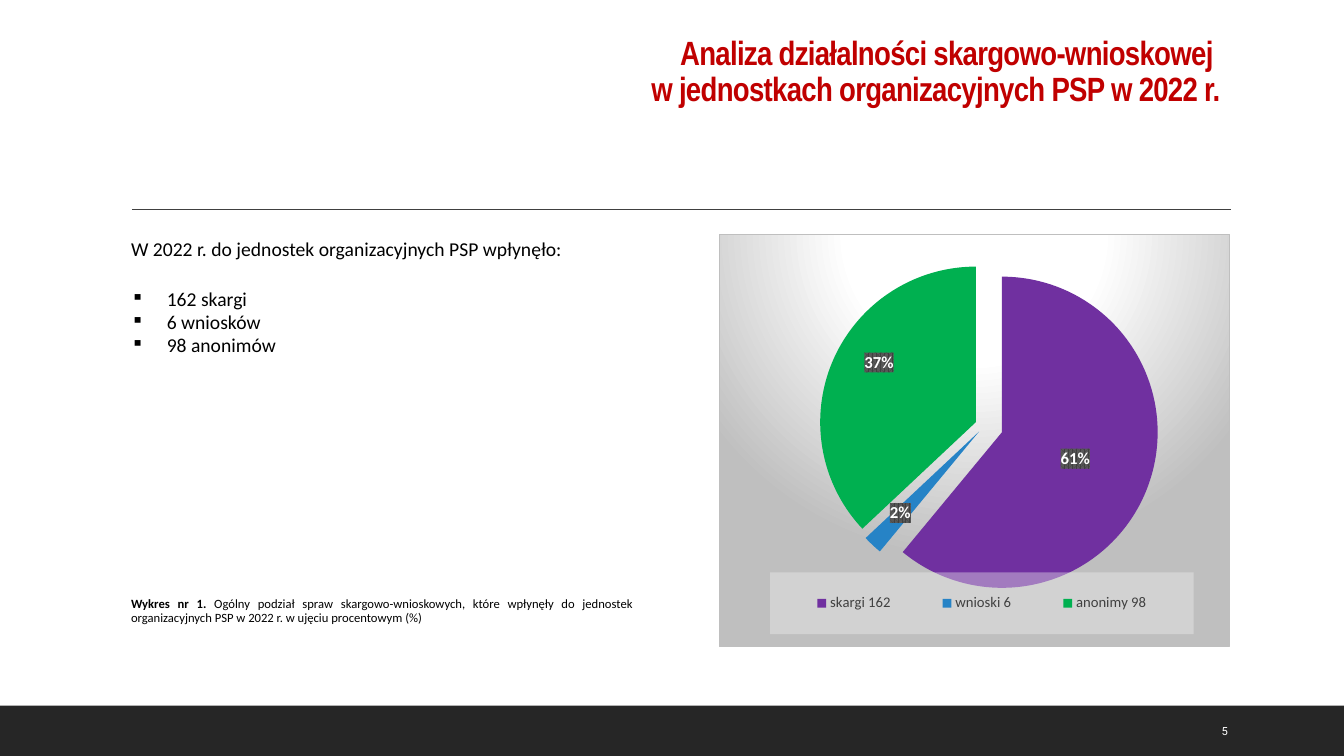
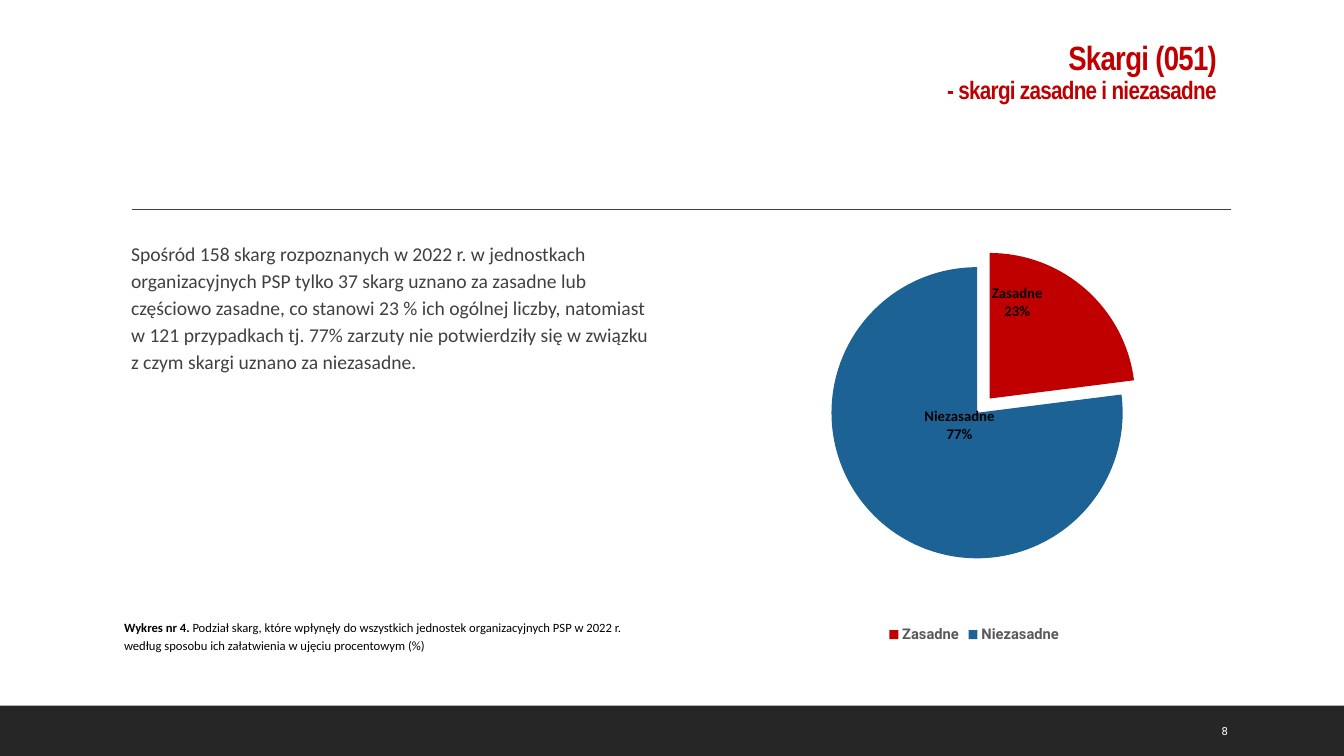
import copy

import lxml.etree
import pptx
import pptx.chart.data
import pptx.dml.color
import pptx.enum.chart
import pptx.enum.shapes
import pptx.enum.text
import pptx.oxml
import pptx.oxml.ns
import pptx.util

Pt = pptx.util.Pt
ALIGN = pptx.enum.text.PP_ALIGN
LEGEND = pptx.enum.chart.XL_LEGEND_POSITION

COLORS = {
    "title": "C00000", "band": "262626", "rule": "404040", "white": "FFFFFF",
    "black": "000000", "body": "404040", "legend": "595959", "silver": "BFBFBF",
    "legend_box": "F2F2F2", "label_box": "404040", "label_dots": "595959",
    "purple": "7030A0", "sky": "2683C6", "green": "00B050",
    "red": "C00000", "navy": "1D6294",
}

TITLE = {"name": "Arial Narrow", "size": Pt(24), "bold": True, "color": "title"}
SUBTITLE = {**TITLE, "size": Pt(18)}
BODY = {"name": "Calibri", "size": Pt(14), "color": "black"}
GRAY_BODY = {**BODY, "color": "body"}
CAPTION = {"name": "Calibri", "size": Pt(9), "color": "black"}
CAPTION_BOLD = {**CAPTION, "bold": True}
PAGE_NUMBER = {"name": "Roboto", "size": Pt(8), "color": "white"}
CHART_TEXT = {"name": "Roboto", "size": Pt(10), "color": "black"}

SLIDE_SIZE = (960, 540)
BAND_HEIGHT = 36
RULE = (94.3, 149.8, 879.1)
CHART_FRAME = (513.4, 167, 365, 295.2)
TEXT_LEFT = 93.6

NAMESPACES = " ".join(pptx.oxml.ns.nsdecls(prefix) for prefix in ("a", "c"))


def rgb(name):
    return pptx.dml.color.RGBColor.from_string(COLORS[name])


def set_attributes(target, formats):
    for name, value in formats.items():
        if name == "color":
            target.color.rgb = rgb(value)
        else:
            setattr(target, name, value)


def xml(tag, content="", attributes=""):
    """Builds one element, with the drawing and chart namespaces declared."""
    return pptx.oxml.parse_xml(f"<{tag} {NAMESPACES} {attributes}>{content}</{tag}>")


def solid(name, alpha=100):
    return (f'<a:solidFill><a:srgbClr val="{COLORS[name]}">'
            f'<a:alpha val="{alpha * 1000}"/></a:srgbClr></a:solidFill>')


def manual_layout(**values):
    content = "".join(f'<c:{name} val="{value}"/>' for name, value in values.items())
    return xml("c:layout", f"<c:manualLayout>{content}</c:manualLayout>")


def add_text(slide, box, paragraphs, anchor=pptx.enum.text.MSO_ANCHOR.TOP, spacing=None):
    """Paragraphs are pairs: formats and a list of (text, font formats) runs."""
    shape = slide.shapes.add_textbox(*map(Pt, box))
    frame = shape.text_frame
    set_attributes(frame, {"word_wrap": True, "vertical_anchor": anchor,
                           "margin_left": 0, "margin_right": 0,
                           "margin_top": 0, "margin_bottom": 0})
    for index, (formats, runs) in enumerate(paragraphs):
        paragraph = frame.paragraphs[0] if index == 0 else frame.add_paragraph()
        set_attributes(paragraph, formats)
        for text, font in runs:
            for number, line in enumerate(text.split("\n")):
                if number:
                    paragraph.add_line_break()
                    paragraph._p[-1].append(copy.deepcopy(run._r.rPr))
                run = paragraph.add_run()
                run.text = line
                set_attributes(run.font, font)
                if spacing:
                    run._r.rPr.set("spc", str(spacing))
    return frame


def add_bullet(paragraph, hanging=25.5):
    properties = paragraph._p.get_or_add_pPr()
    properties.set("marL", str(Pt(hanging)))
    properties.set("indent", str(-Pt(hanging)))
    properties.append(xml("a:buSzPct", attributes='val="90000"'))
    properties.append(xml("a:buChar", attributes='char="▪"'))


def add_title(slide, right, top, lines):
    formats = {"alignment": ALIGN.RIGHT, "line_spacing": 0.9}
    add_text(slide, (right - 780, top, 780, 72),
             [(formats, [line]) for line in lines], spacing=-50)


def add_caption(slide, box, number, text, formats):
    add_text(slide, box, [(formats, [(f"Wykres nr {number}. ", CAPTION_BOLD),
                                     (text, CAPTION)])])


def add_base_slide(presentation, page):
    """Adds a slide with the footer band, the rule and the page number."""
    slide = presentation.slides.add_slide(presentation.slide_layouts[6])
    width, height = SLIDE_SIZE
    band_top = height - BAND_HEIGHT
    band = slide.shapes.add_shape(pptx.enum.shapes.MSO_SHAPE.RECTANGLE,
                                  0, Pt(band_top), Pt(width), Pt(BAND_HEIGHT))
    band.shadow.inherit = False
    band.fill.solid()
    band.fill.fore_color.rgb = rgb("band")
    band.line.fill.background()

    left, top, right = map(Pt, RULE)
    rule = slide.shapes.add_connector(pptx.enum.shapes.MSO_CONNECTOR.STRAIGHT,
                                      left, top, right, top)
    set_attributes(rule.line, {"color": "rule", "width": Pt(1)})
    rule._element.spPr.append(xml("a:effectLst"))

    add_text(slide, (872.6, band_top, 54, BAND_HEIGHT), [({}, [(page, PAGE_NUMBER)])],
             pptx.enum.text.MSO_ANCHOR.MIDDLE)
    return slide


def style_label(point, font, offset, with_category, box):
    label = point.data_label
    label.position = pptx.enum.chart.XL_LABEL_POSITION.CENTER
    set_attributes(label.font, font)
    element = point._ser.xpath(f"c:dLbls/c:dLbl[c:idx/@val={point._idx}]")[0]
    shown = {"showVal": 0, "showPercent": 1, "showCatName": int(with_category)}
    for name, value in shown.items():
        element.find(pptx.oxml.ns.qn(f"c:{name}")).set("val", str(value))
    if any(offset):
        element[0].addnext(manual_layout(x=offset[0], y=offset[1]))
    if box:
        element.find(pptx.oxml.ns.qn("c:txPr")).addprevious(xml("c:spPr", box))
    element.append(xml("c:separator", "\n"))


def add_pie(slide, slices, plot, explosion, label_font, legend_font, legend_position,
            with_category=False, label_box=None, background="<a:noFill/><a:ln><a:noFill/></a:ln>"):
    """Slices are (category, value, color, explosion, label offset)."""
    data = pptx.chart.data.CategoryChartData()
    data.categories = [item[0] for item in slices]
    data.add_series("Series 1", [item[1] for item in slices])
    chart = slide.shapes.add_chart(pptx.enum.chart.XL_CHART_TYPE.PIE,
                                   *map(Pt, CHART_FRAME), data).chart
    chart.has_title = False
    chart.has_legend = True
    set_attributes(chart.font, CHART_TEXT)
    set_attributes(chart.legend, {"position": legend_position, "include_in_layout": False})
    set_attributes(chart.legend.font, legend_font)
    chart.plots[0].vary_by_categories = True

    series = chart.plots[0].series[0]
    for index, (_, _, color, distance, offset) in enumerate(slices):
        point = series.points[index]
        point.format.fill.solid()
        point.format.fill.fore_color.rgb = rgb(color)
        point.format.line.fill.background()
        properties = series._element.xpath("c:dPt/c:spPr")[index]
        properties.addprevious(xml("c:explosion", attributes=f'val="{distance}"'))
        style_label(point, label_font, offset, with_category, label_box)
    first_point = series._element.xpath("c:dPt")[0]
    first_point.addprevious(xml("c:explosion", attributes=f'val="{explosion}"'))

    plot_area = chart._chartSpace.xpath("c:chart/c:plotArea")[0]
    for layout in plot_area.xpath("c:layout"):
        plot_area.remove(layout)
    x, y, width, height = plot
    plot_area.insert(0, manual_layout(layoutTarget="inner", xMode="edge", yMode="edge",
                                      x=x, y=y, w=width, h=height))
    chart._chartSpace.xpath("c:txPr")[0].addprevious(xml("c:spPr", background))
    return chart


def place_legend(chart, x, y, width, height, fill):
    legend = chart.legend._element
    for layout in legend.xpath("c:layout"):
        legend.remove(layout)
    legend.xpath("c:legendPos")[0].addnext(
        manual_layout(xMode="edge", yMode="edge", x=x, y=y, w=width, h=height))
    legend.xpath("c:txPr")[0].addprevious(xml("c:spPr", fill))


def build_overview(presentation):
    slide = add_base_slide(presentation, "5")
    add_title(slide, 871.2, 26, [("Analiza działalności skargowo-wnioskowej ", TITLE),
                                 ("w jednostkach organizacyjnych PSP w 2022 r.", TITLE)])
    counts = ["162 skargi", "6 wniosków", "98 anonimów"]
    paragraphs = [({"line_spacing": 0.95, "space_after": Pt(19)},
                   [("W 2022 r. do jednostek organizacyjnych PSP wpłynęło:", BODY)])]
    paragraphs += [({"line_spacing": 0.98}, [(count, BODY)]) for count in counts]
    frame = add_text(slide, (TEXT_LEFT, 170.6, 358, 100), paragraphs)
    for paragraph in frame.paragraphs[1:]:
        add_bullet(paragraph)
    add_caption(slide, (TEXT_LEFT, 426.5, 358, 30), 1,
                "Ogólny podział spraw skargowo-wnioskowych, które wpłynęły do jednostek "
                "organizacyjnych PSP w 2022 r. w ujęciu procentowym (%)",
                {"alignment": ALIGN.JUSTIFY, "line_spacing": 0.95})

    stops = "".join(f'<a:gs pos="{position * 1000}"><a:srgbClr val="{COLORS[name]}"/></a:gs>'
                    for position, name in ((0, "white"), (39, "white"), (100, "silver")))
    background = (f'<a:gradFill><a:gsLst>{stops}</a:gsLst><a:path path="circle">'
                  '<a:fillToRect l="50000" t="-80000" r="50000" b="180000"/></a:path>'
                  f'</a:gradFill><a:ln w="{Pt(0.75)}">{solid("silver")}</a:ln>')
    label_box = ('<a:pattFill prst="pct75">'
                 f'<a:fgClr><a:srgbClr val="{COLORS["label_box"]}"/></a:fgClr>'
                 f'<a:bgClr><a:srgbClr val="{COLORS["label_dots"]}"/></a:bgClr></a:pattFill>')
    chart = add_pie(
        slide,
        [("skargi 162", 61, "purple", 12, (0, 0)),
         ("wnioski 6", 2, "sky", 5, (-0.05, 0.06)),
         ("anonimy 98", 37, "green", 6, (-0.05, -0.07))],
        plot=(0.1, 0.08, 0.84, 0.77), explosion=2,
        label_font={"name": "Calibri", "size": Pt(12), "bold": True, "color": "white"},
        legend_font={"name": "Calibri", "size": Pt(10.5), "color": "body"},
        legend_position=LEGEND.RIGHT, label_box=label_box, background=background)
    place_legend(chart, 0.1, 0.82, 0.83, 0.15, solid("legend_box", 39))


def build_complaints(presentation):
    slide = add_base_slide(presentation, "8")
    add_title(slide, 869, 29.5, [("Skargi (051)", TITLE),
                                 ("- skargi zasadne i niezasadne", SUBTITLE)])
    text = ("Spośród 158 skarg rozpoznanych w 2022 r. w jednostkach organizacyjnych PSP "
            "tylko 37 skarg uznano za zasadne lub częściowo zasadne, co stanowi 23 % ich "
            "ogólnej liczby, natomiast \nw 121 przypadkach tj. 77% zarzuty nie potwierdziły "
            "się w związku \nz czym skargi uznano za niezasadne.")
    add_text(slide, (TEXT_LEFT, 170.6, 381, 110), [({"line_spacing": 1.14}, [(text, GRAY_BODY)])])
    add_pie(
        slide,
        [("Zasadne", 23, "red", 8, (-0.04, -0.1)),
         ("Niezasadne", 77, "navy", 5, (0.06, -0.1))],
        plot=(0.06, 0.05, 0.91, 0.74), explosion=5,
        label_font={"name": "Calibri", "size": Pt(10.5), "bold": True, "color": "black"},
        legend_font={"name": "Roboto", "size": Pt(10.5), "bold": True, "color": "legend"},
        legend_position=LEGEND.BOTTOM, with_category=True)
    add_caption(slide, (88.6, 441.4, 373.7, 28), 4,
                "Podział skarg, które wpłynęły do wszystkich jednostek organizacyjnych PSP "
                "w 2022 r. według sposobu ich załatwienia w ujęciu procentowym (%)",
                {"line_spacing": 1.15})


def main():
    presentation = pptx.Presentation()
    presentation.slide_width, presentation.slide_height = map(Pt, SLIDE_SIZE)
    build_overview(presentation)
    build_complaints(presentation)
    presentation.save("out.pptx")


if __name__ == "__main__":
    main()
